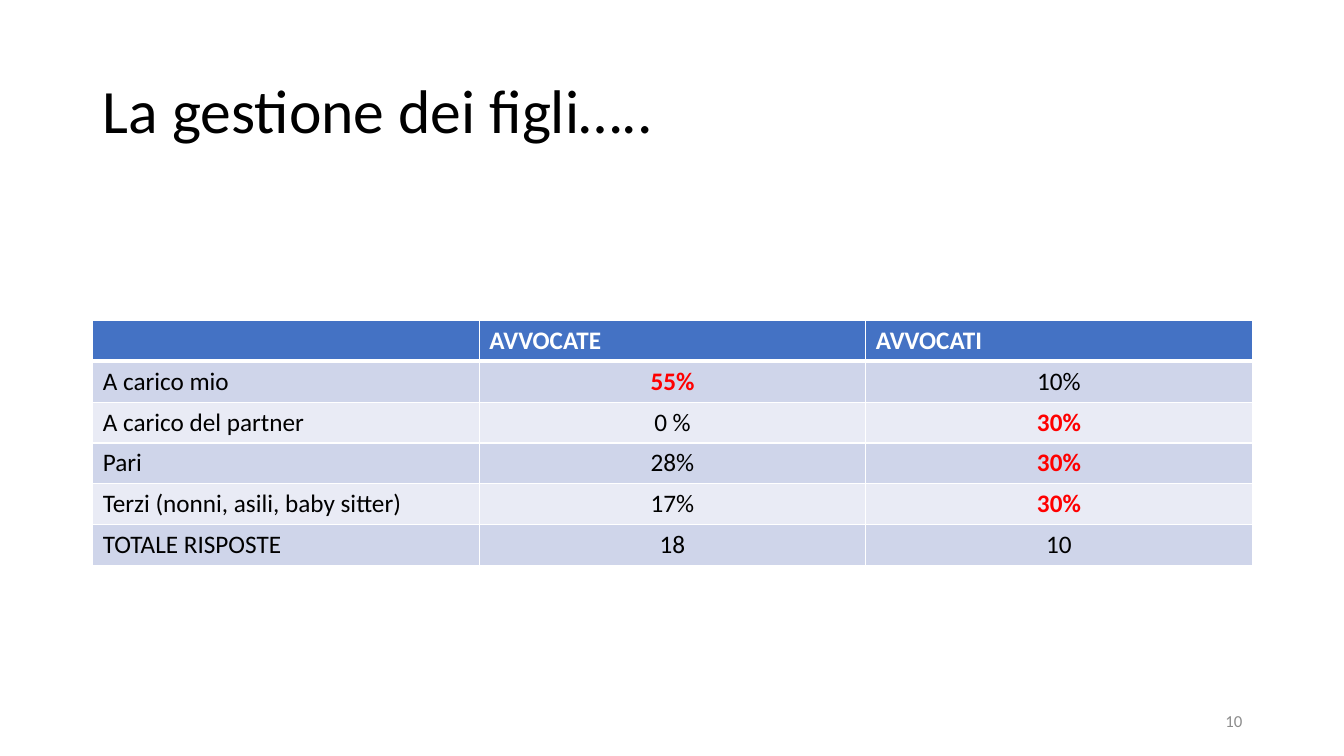
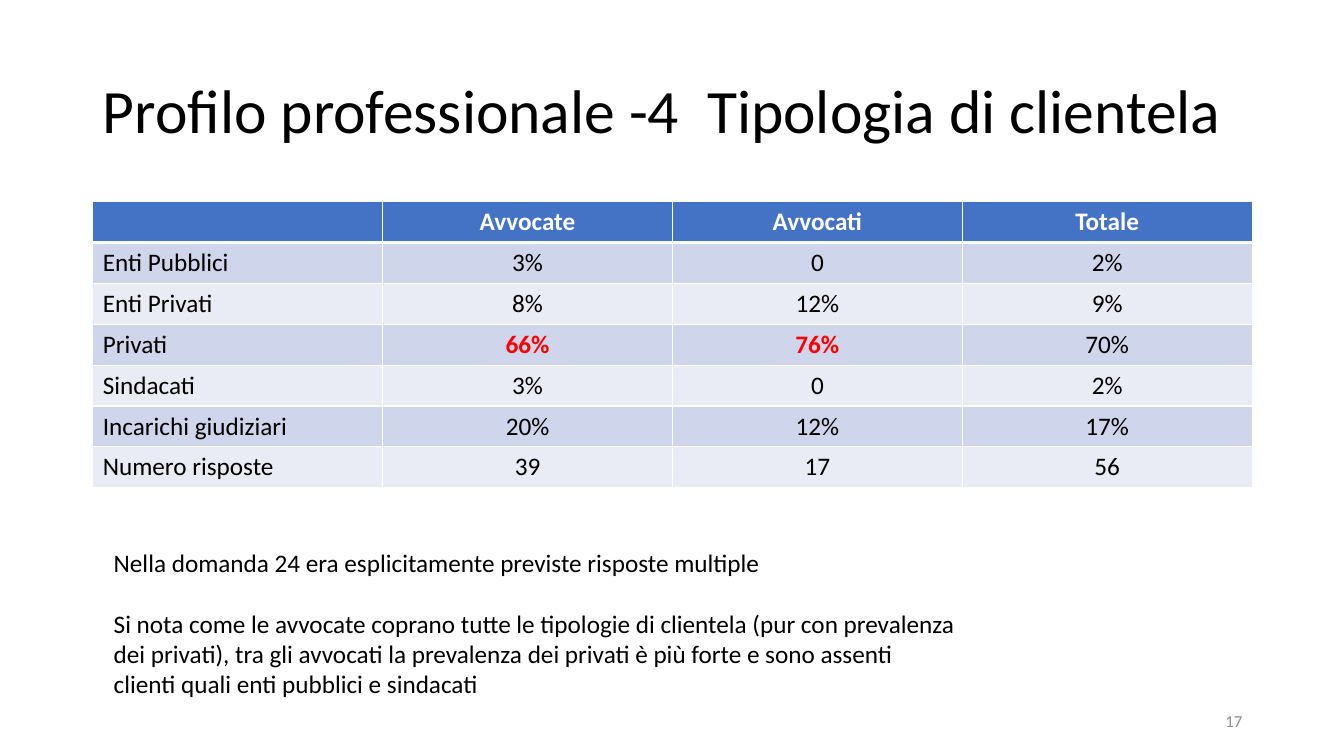
from lxml.etree import SubElement
from pptx import Presentation
from pptx.dml.color import RGBColor
from pptx.enum.text import MSO_ANCHOR as Anchor, MSO_AUTO_SIZE as AutoSize, PP_ALIGN as Align
from pptx.oxml.ns import qn
from pptx.util import Inches, Pt

FONT = "Calibri"
COLORS = {
    "text": "000000",
    "header": "4472C4",
    "header_text": "FFFFFF",
    "band_dark": "CFD5EA",
    "band_light": "E9EBF5",
    "border": "FFFFFF",
    "highlight": "FF0000",
    "page_number": "8C8C8C",
}
LEFT, CONTENT_WIDTH = 0.92, 11.5


def rgb(name):
    return RGBColor.from_string(COLORS[name])


class Deck:
    """Shared style plus the slide being built."""

    def __init__(self):
        self.prs = Presentation()
        self.prs.slide_width, self.prs.slide_height = Inches(13.33), Inches(7.5)
        self.slide = None

    def add_run(self, paragraph, text, size=18, color="text", bold=False):
        run = paragraph.add_run()
        run.text = text
        run.font.name, run.font.size, run.font.bold = FONT, Pt(size), bold
        run.font.color.rgb = rgb(color)

    # Title and page number, common to every slide
    def new_slide(self, heading, page):
        self.slide = self.prs.slides.add_slide(self.prs.slide_layouts[5])
        title = self.slide.shapes.title
        title.left, title.top = Inches(LEFT), Inches(0.4)
        title.width, title.height = Inches(CONTENT_WIDTH), Inches(1.45)
        frame = title.text_frame
        frame.auto_size, frame.vertical_anchor = AutoSize.NONE, Anchor.MIDDLE
        line = frame.paragraphs[0]
        line.alignment, line.line_spacing = Align.LEFT, 0.9
        self.add_run(line, heading, 44)

        number = self.text_box(9.42, 6.95, 3, 0.4)
        number.vertical_anchor = Anchor.MIDDLE
        number.paragraphs[0].alignment = Align.RIGHT
        self.add_run(number.paragraphs[0], page, 12, "page_number")

    def text_box(self, left, top, width, height):
        box = self.slide.shapes.add_textbox(
            Inches(left), Inches(top), Inches(width), Inches(height))
        box.text_frame.word_wrap = True
        return box.text_frame

    # Paragraphs are given as lists of lines
    def comment(self, left, top, width, height, paragraphs):
        frame = self.text_box(left, top, width, height)
        for i, lines in enumerate(paragraphs):
            paragraph = frame.add_paragraph() if i else frame.paragraphs[0]
            if i:
                paragraph.space_before = Pt(22)
            for j, line in enumerate(lines):
                if j:
                    paragraph.add_line_break()
                self.add_run(paragraph, line)

    def set_borders(self, cell, top=1, bottom=1):
        properties = cell._tc.get_or_add_tcPr()
        for side, width in (("L", 1), ("R", 1), ("T", top), ("B", bottom)):
            line = SubElement(properties, qn(f"a:ln{side}"), w=str(Pt(width)))
            fill = SubElement(line, qn("a:solidFill"))
            SubElement(fill, qn("a:srgbClr"), val=COLORS["border"])

    # Highlighted cells are (row, column) pairs
    def results_table(self, top, height, rows, highlights, header_align):
        table = self.slide.shapes.add_table(
            len(rows), len(rows[0]), Inches(LEFT), Inches(top),
            Inches(CONTENT_WIDTH), Inches(height)).table
        table.horz_banding = False
        for r, row in enumerate(rows):
            band = "header" if r == 0 else "band_dark" if r % 2 else "band_light"
            for c, text in enumerate(row):
                cell = table.cell(r, c)
                self.set_borders(cell, top=3 if r == 1 else 1, bottom=3 if r == 0 else 1)
                cell.fill.solid()
                cell.fill.fore_color.rgb = rgb(band)
                if not text:
                    continue
                paragraph = cell.text_frame.paragraphs[0]
                if c:
                    paragraph.alignment = Align.CENTER if r else header_align
                marked = (r, c) in highlights
                color = "header_text" if r == 0 else "highlight" if marked else "text"
                self.add_run(paragraph, text, color=color, bold=r == 0 or marked)


def main():
    deck = Deck()

    # Childcare
    deck.new_slide("La gestione dei figli…..", "10")
    childcare = [
        ("", "AVVOCATE", "AVVOCATI"),
        ("A carico mio", "55%", "10%"),
        ("A carico del partner", "0 %", "30%"),
        ("Pari", "28%", "30%"),
        ("Terzi (nonni, asili, baby sitter)", "17%", "30%"),
        ("TOTALE RISPOSTE", "18", "10"),
    ]
    deck.results_table(3.18, 2.43, childcare, {(1, 1), (2, 2), (3, 2), (4, 2)}, Align.LEFT)

    # Types of client
    deck.new_slide("Profilo professionale -4  Tipologia di clientela", "17")
    clients = [
        ("", "Avvocate", "Avvocati", "Totale"),
        ("Enti Pubblici", "3%", "0", "2%"),
        ("Enti Privati", "8%", "12%", "9%"),
        ("Privati", "66%", "76%", "70%"),
        ("Sindacati", "3%", "0", "2%"),
        ("Incarichi giudiziari", "20%", "12%", "17%"),
        ("Numero risposte", "39", "17", "56"),
    ]
    deck.results_table(2, 2.84, clients, {(3, 1), (3, 2)}, Align.CENTER)
    deck.comment(1.03, 5.38, 8.93, 1.62, [
        ["Nella domanda 24 era esplicitamente previste risposte multiple"],
        ["Si nota come le avvocate coprano tutte le tipologie di clientela (pur con prevalenza",
         "dei privati), tra gli avvocati la prevalenza dei privati è più forte e sono assenti",
         "clienti quali enti pubblici e sindacati"],
    ])

    deck.prs.save("out.pptx")


if __name__ == "__main__":
    main()
